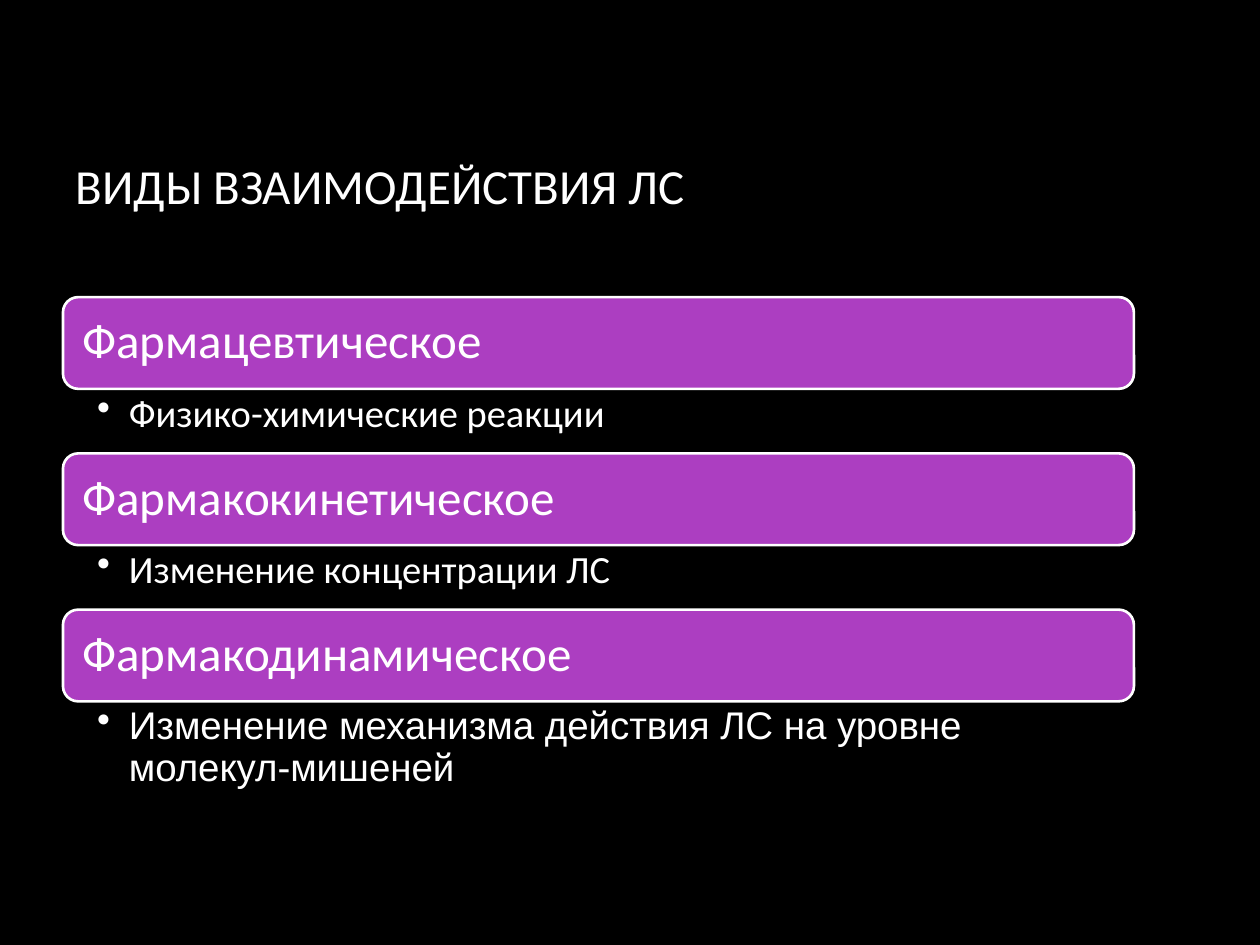
from dataclasses import dataclass

from lxml import etree
from pptx import Presentation
from pptx import util as u
from pptx.dml.color import RGBColor
from pptx.enum import shapes, text
from pptx.oxml.ns import qn


@dataclass(frozen=True)
class Theme:
    background: RGBColor = RGBColor(0, 0, 0)
    ink: RGBColor = RGBColor(255, 255, 255)
    bar: RGBColor = RGBColor(0xAC, 0x3E, 0xC1)
    font: str = "Calibri"
    detail_font: str = "Arial"
    heading_size: int = 28
    detail_size: int = 22


THEME = Theme()
# Heading, explanation, font of the explanation, height of its box in cm
KINDS = [
    ("Фармацевтическое", "Физико-химические реакции", THEME.font, 1.3),
    ("Фармакокинетическое", "Изменение концентрации ЛС", THEME.font, 1.3),
    ("Фармакодинамическое",
     "Изменение механизма действия ЛС на уровне молекул-мишеней",
     THEME.detail_font, 1.88),
]
BAR_HEIGHT = 1.85


def write(frame, words, size, font=THEME.font):
    """Put one left-aligned paragraph in a text frame."""
    frame.word_wrap = True
    para = frame.paragraphs[0]
    para.text = words
    para.alignment = text.PP_ALIGN.LEFT
    para.font.size = u.Pt(size)
    para.font.name = font
    para.font.color.rgb = THEME.ink
    return para


def set_margins(frame, left, top, right, bottom):
    frame.margin_left, frame.margin_top = u.Cm(left), u.Cm(top)
    frame.margin_right, frame.margin_bottom = u.Cm(right), u.Cm(bottom)


def add_title(page, left, top, width, height):
    title = page.shapes.title
    title.left, title.top = u.Cm(left), u.Cm(top)
    title.width, title.height = u.Cm(width), u.Cm(height)
    title.text_frame.vertical_anchor = text.MSO_ANCHOR.MIDDLE
    write(title.text_frame, "ВИДЫ ВЗАИМОДЕЙСТВИЯ ЛС", THEME.heading_size)


def add_bar(page, left, top, width, words):
    bar = page.shapes.add_shape(
        shapes.MSO_SHAPE.ROUNDED_RECTANGLE,
        u.Cm(left), u.Cm(top), u.Cm(width), u.Cm(BAR_HEIGHT))
    bar.shadow.inherit = False
    bar.fill.solid()
    bar.fill.fore_color.rgb = THEME.bar
    bar.line.color.rgb = THEME.ink
    bar.line.width = u.Pt(1.5)
    frame = bar.text_frame
    frame.vertical_anchor = text.MSO_ANCHOR.MIDDLE
    set_margins(frame, 0.3, 0.3, 0.3, 0.3)
    write(frame, words, THEME.heading_size).line_spacing = 0.9


def add_detail(page, left, top, width, height, words, font):
    box = page.shapes.add_textbox(
        u.Cm(left), u.Cm(top), u.Cm(width), u.Cm(height))
    frame = box.text_frame
    set_margins(frame, 0.69, 0.1, 0.56, 0.1)
    # Bullet with a hanging indent
    para = frame.paragraphs[0]
    para.level = 1
    properties = para._p.get_or_add_pPr()
    properties.set("marL", str(u.Cm(0.64)))
    properties.set("indent", str(-u.Cm(0.64)))
    etree.SubElement(properties, qn("a:buChar")).set("char", "•")
    write(frame, words, THEME.detail_size, font).line_spacing = 0.9


def add_kinds(page, left, top, width):
    """Stack each heading bar with its explanation below."""
    for heading, detail, font, height in KINDS:
        add_bar(page, left, top, width, heading)
        top += BAR_HEIGHT
        add_detail(page, left, top, width, height, detail, font)
        top += height


def main():
    deck = Presentation()
    deck.slide_width, deck.slide_height = u.Cm(25.4), u.Cm(19.05)
    page = deck.slides.add_slide(deck.slide_layouts.get_by_name("Title Only"))
    page.background.fill.solid()
    page.background.fill.fore_color.rgb = THEME.background
    add_title(page, 1.27, 1.7, 21.59, 4.04)
    add_kinds(page, 1.27, 5.99, 21.59)
    deck.save("out.pptx")


if __name__ == "__main__":
    main()
